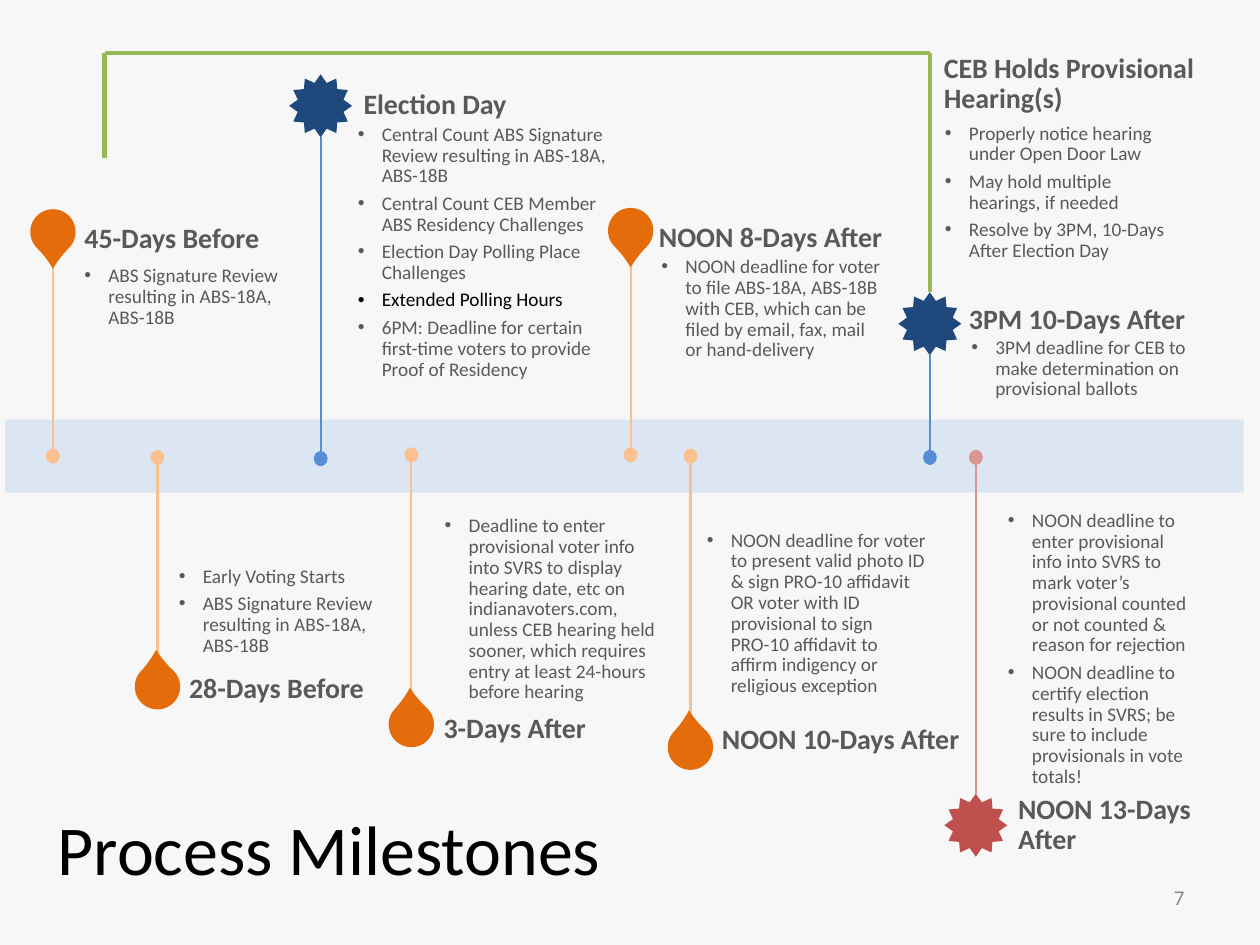
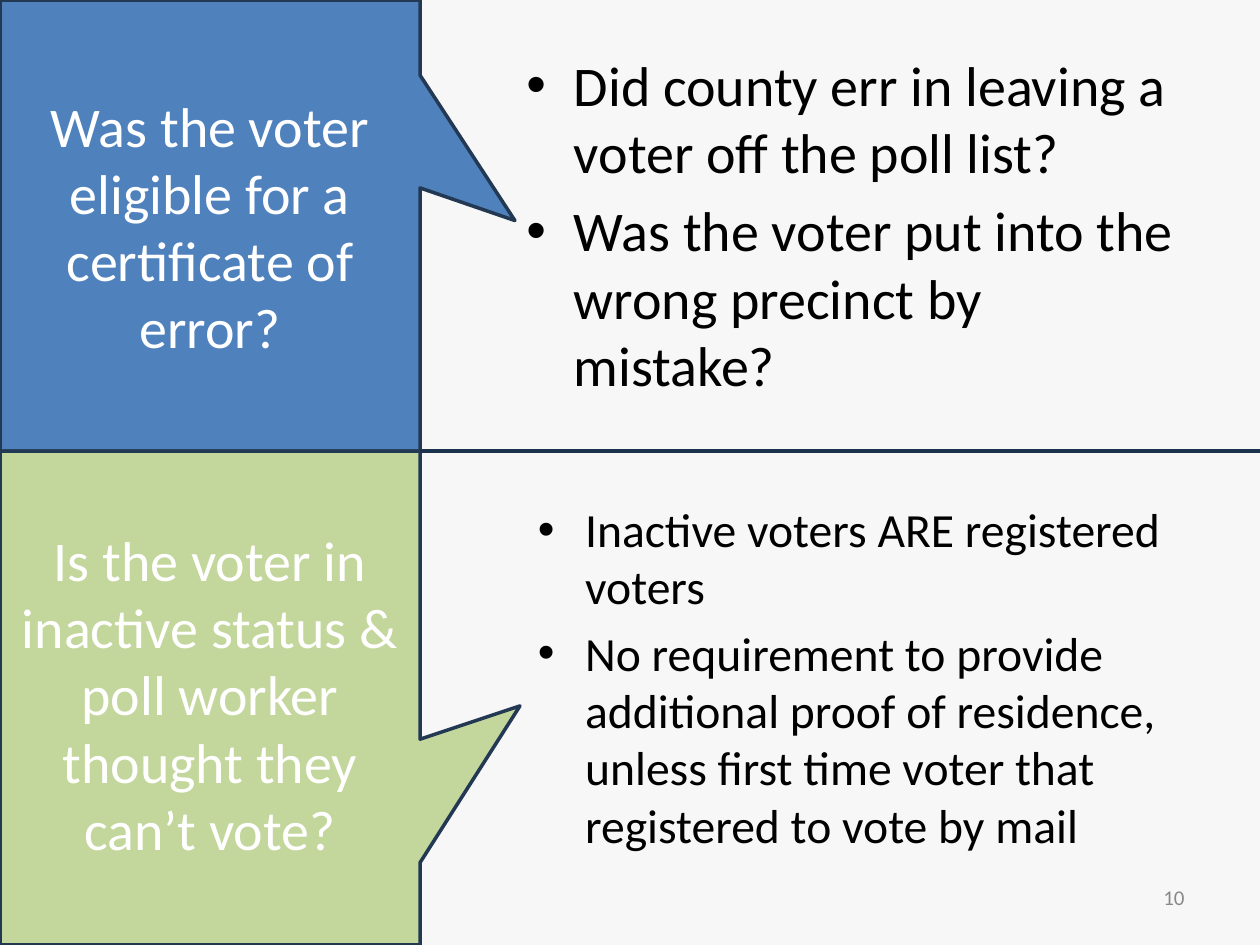
from dataclasses import dataclass
from lxml.etree import SubElement
from pptx import Presentation
from pptx.dml.color import RGBColor
from pptx.enum.shapes import MSO_CONNECTOR, MSO_SHAPE
from pptx.enum.text import MSO_ANCHOR, PP_ALIGN
from pptx.oxml.ns import qn
from pptx.util import Inches, Pt

# Grid: 100 columns by 75 rows of square cells
COLS, ROWS = 100, 75
CELL = Inches(10) / COLS

FONT = "Calibri"
PAPER = RGBColor(0xF7, 0xF7, 0xF7)
BLACK = RGBColor(0, 0, 0)
WHITE = RGBColor(255, 255, 255)
GREY = RGBColor(0x59, 0x59, 0x59)
PALE = RGBColor(0x89, 0x89, 0x89)
BAND = RGBColor(0xDC, 0xE6, 0xF2)
PEACH = RGBColor(0xFA, 0xC0, 0x90)
ORANGE = RGBColor(0xE4, 0x6C, 0x0A)
SKY = RGBColor(0x55, 0x8E, 0xD5)
NAVY = RGBColor(0x1F, 0x49, 0x7D)
ROSE = RGBColor(0xD9, 0x96, 0x94)
RED = RGBColor(0xC0, 0x50, 0x4D)
GREEN = RGBColor(0x98, 0xB9, 0x55)
BLUE = RGBColor(0x4F, 0x81, 0xBD)
LIME = RGBColor(0xC3, 0xD6, 0x9B)
EDGE = RGBColor(0x23, 0x39, 0x53)
RULE = RGBColor(0x1C, 0x33, 0x4E)

TOP, MID, LOW = MSO_ANCHOR.TOP, MSO_ANCHOR.MIDDLE, MSO_ANCHOR.BOTTOM
PLAIN = (1, 0.5, 1, 0.5)
HEAD_PAD = (0, 0, 1.1, 0)
NOTE_PAD = (0, 0.8, 0.8, 1.1)


@dataclass
class Box:
    x: float
    y: float
    w: float
    h: float

    def sub(self, x, y, w, h):
        return Box(self.x + x, self.y + y, w, h)

    def size(self):
        return [round(v * CELL) for v in (self.x, self.y, self.w, self.h)]


@dataclass
class Style:
    size: float
    color: RGBColor
    bold: bool = False
    align: PP_ALIGN = PP_ALIGN.LEFT
    indent: float = 0
    line: float = 1
    before: float = 0  # share of the font size
    after: float = 0


HEAD = Style(16, GREY, bold=True, line=0.9, after=0.35)
NOTE = Style(11, GREY, indent=1.9, line=0.9, after=0.35)
TITLE = Style(40, BLACK)
PAGE = Style(12, PALE, align=PP_ALIGN.RIGHT)
ASK = Style(32, WHITE, align=PP_ALIGN.CENTER)


def bullet(para, indent):
    props = para._p.get_or_add_pPr()
    step = round(indent * CELL)
    props.set("marL", str(step))
    props.set("indent", str(-step))
    SubElement(props, qn("a:buFont")).set("typeface", "Arial")
    SubElement(props, qn("a:buChar")).set("char", "•")


def write(shape, items, style, anchor=TOP, pad=PLAIN):
    """Each item is a text, or a text with its own colour."""
    frame = shape.text_frame
    frame.word_wrap = True
    frame.vertical_anchor = anchor
    (frame.margin_left, frame.margin_top,
     frame.margin_right, frame.margin_bottom) = [round(v * CELL) for v in pad]
    for i, item in enumerate(items):
        text, color = item if isinstance(item, tuple) else (item, style.color)
        para = frame.add_paragraph() if i else frame.paragraphs[0]
        para.alignment = style.align
        para.line_spacing = style.line
        para.space_before = Pt(style.before * style.size)
        para.space_after = Pt(style.after * style.size)
        if style.indent:
            bullet(para, style.indent)
        for j, part in enumerate(text.split("\n")):
            if j:
                para.add_line_break()
            run = para.add_run()
            run.text = part
            run.font.name = FONT
            run.font.size = Pt(style.size)
            run.font.bold = style.bold
            run.font.color.rgb = color


def label(slide, box, items, style, anchor=TOP, pad=PLAIN):
    write(slide.shapes.add_textbox(*box.size()), items, style, anchor, pad)


def form(slide, kind, box, fill, edge=None):
    shape = slide.shapes.add_shape(kind, *box.size())
    shape.shadow.inherit = False
    shape.fill.solid()
    shape.fill.fore_color.rgb = fill
    if edge:
        shape.line.color.rgb = edge
        shape.line.width = Pt(2)
    else:
        shape.line.fill.background()
    return shape


def rule(slide, box, color, width):
    """Straight line along the diagonal of the box."""
    x, y, w, h = box.size()
    line = slide.shapes.add_connector(MSO_CONNECTOR.STRAIGHT, x, y, x + w, y + h)
    line.line.color.rgb = color
    line.line.width = Pt(width)
    SubElement(line._element.spPr, qn("a:effectLst"))


def page(deck, number):
    slide = deck.slides.add_slide(deck.slide_layouts[6])
    slide.background.fill.solid()
    slide.background.fill.fore_color.rgb = PAPER
    label(slide, Box(90, 69.2, 5, 4), [number], PAGE, MID)
    return slide


@dataclass
class Stop:
    x: float      # stem
    dot: float    # row of the dot on the band
    mark: float   # row of the marker's centre
    head: str
    shift: tuple  # heading, from the marker's centre
    edge: tuple   # note's left and its fixed edge, from the marker's centre
    notes: list
    wide: float = 18.3
    star: bool = False
    tones: tuple = (PEACH, ORANGE)


STOPS = [
    Stop(4.2, 36.2, 18.4, "45-Days Before", (2.5, 0.6), (2.5, 1.9),
         ["ABS Signature Review resulting in ABS-18A, ABS-18B"]),
    Stop(12.5, 36.3, 54.5, "28-Days Before", (2.5, 0.2), (1.7, -1.3),
         ["Early Voting Starts",
          "ABS Signature Review resulting in ABS-18A, ABS-18B"]),
    Stop(25.45, 36.4, 8.4, "Election Day", (3.4, 0), (2.95, 0.7),
         ["Central Count ABS Signature Review resulting in ABS-18A, ABS-18B",
          "Central Count CEB Member ABS Residency Challenges",
          "Election Day Polling Place Challenges",
          ("Extended Polling Hours", BLACK),
          "6PM: Deadline for certain first-time voters to provide "
          "Proof of Residency"], 21.6, True, (SKY, NAVY)),
    Stop(32.65, 36.1, 57.5, "3-Days After", (2.55, 0.4), (2.65, -0.6),
         ["Deadline to enter provisional voter info into SVRS to display "
          "hearing date, etc on indianavoters.com, unless CEB hearing held "
          "sooner, which requires entry at least 24-hours before hearing"]),
    Stop(50.05, 36.1, 18.3, "NOON 8-Days After", (2.25, 0.6), (2.45, 1.3),
         ["NOON deadline for voter to file ABS-18A, ABS-18B with CEB, which "
          "can be filed by email, fax, mail or hand-delivery"]),
    Stop(54.8, 36.2, 59.3, "NOON 10-Days After", (2.5, -0.5), (1.3, -2.9),
         ["NOON deadline for voter to present valid photo ID & sign PRO-10 "
          "affidavit OR voter with ID provisional to sign PRO-10 affidavit "
          "to affirm indigency or religious exception"]),
    Stop(73.8, 36.3, 25.7, "3PM 10-Days After", (3.1, -0.3), (3.3, 0.3),
         ["3PM deadline for CEB to make determination on provisional ballots"],
         star=True, tones=(SKY, NAVY)),
    Stop(77.45, 36.3, 65.5, "NOON 13-Days\nAfter", (3.35, 0), (2.55, -1.9),
         ["NOON deadline to enter provisional info into SVRS to mark voter’s "
          "provisional counted or not counted & reason for rejection",
          "NOON deadline to certify election results in SVRS; be sure to "
          "include provisionals in vote totals!"], 15.6, True, (ROSE, RED)),
]


def heading(slide, box, text):
    label(slide, box, [text], HEAD, MID, HEAD_PAD)


def milestone(slide, area, stop):
    above = stop.mark < stop.dot
    light, dark = stop.tones
    # Stem and dot
    tip = stop.mark + (2.5 if above else -2.5)
    first, last = sorted((stop.dot, tip))
    rule(slide, area.sub(stop.x, first, 0, last - first), light, 1.25)
    form(slide, MSO_SHAPE.OVAL,
         area.sub(stop.x - 0.55, stop.dot - 0.6, 1.1, 1.2), light)
    # Marker
    side = 5 if stop.star else 3.6
    spot = area.sub(stop.x - side / 2, stop.mark - side / 2, side, side)
    if stop.star:
        form(slide, MSO_SHAPE.STAR_12_POINT, spot, dark)
    else:
        drop = form(slide, MSO_SHAPE.TEAR, spot, dark)
        drop.adjustments[0] = 1.15
        drop.rotation = 135 if above else 312.8
    # Heading and note
    dx, dy = stop.shift
    heading(slide, area.sub(stop.x + dx, stop.mark + dy - 2.3, 21.1, 4.6),
            stop.head)
    dx, dy = stop.edge
    tall = 13.1
    y = stop.mark + dy - (0 if above else tall)
    label(slide, area.sub(stop.x + dx, y, stop.wide, tall), stop.notes, NOTE,
          TOP if above else LOW, NOTE_PAD)


def hearing(slide, box):
    # Bracket over the period of hearings
    for x, y, w, h in ((0, 0, 65.5, 0), (0, 0, 0, 8.3), (65.5, 0, 0, 19)):
        rule(slide, box.sub(x, y, w, h), GREEN, 2.5)
    heading(slide, box.sub(66.6, 0.2, 21.1, 4.6),
            "CEB Holds Provisional Hearing(s)")
    label(slide, box.sub(66.7, 4.8, 18.3, 10.3),
          ["Properly notice hearing under Open Door Law",
           "May hold multiple hearings, if needed",
           "Resolve by 3PM, 10-Days After Election Day"],
          NOTE, TOP, NOTE_PAD)


def timeline(slide, area):
    form(slide, MSO_SHAPE.RECTANGLE, area.sub(0.4, 33.3, 98.3, 5.8), BAND)
    hearing(slide, area.sub(8.3, 4.2, 87.7, 19))
    for stop in STOPS:
        milestone(slide, area, stop)
    label(slide, area.sub(3.6, 63.4, 47, 9.5), ["Process Milestones"], TITLE)


def question(slide, box, ask, fill, tail, anchor, pad, answer, items, size):
    # Callout on the left third
    call = form(slide, MSO_SHAPE.RECTANGULAR_CALLOUT,
                box.sub(0, 0, box.w / 3, box.h), fill, EDGE)
    call.adjustments[0], call.adjustments[1] = tail
    write(call, [ask], ASK, anchor, pad)
    # Answers on the right
    dx, dy = answer
    label(slide, box.sub(dx, dy, 54.2, 29.2), items,
          Style(size, BLACK, indent=3.75, before=0.2))


def questions(slide, area):
    cut = 35.8
    question(slide, area.sub(0, 0, area.w, cut),
             "Was the voter eligible for a certificate of error?",
             BLUE, (0.726, -0.011), MID, PLAIN, (40.8, 3.5),
             ["Did county err in leaving a voter off the poll list?",
              "Was the voter put into the wrong precinct by mistake?"], 32)
    question(slide, area.sub(0, cut, area.w, area.h - cut),
             "Is the voter in inactive status & poll worker thought they "
             "can’t vote?",
             LIME, (0.738, 0.016), TOP, (1, 5.9, 1, 0.5), (41.7, 3.4),
             ["Inactive voters ARE registered voters",
              "No requirement to provide additional proof of residence, "
              "unless first time voter that registered to vote by mail"], 27.2)
    rule(slide, area.sub(area.w / 3, cut, area.w * 2 / 3, 0), RULE, 2.25)


def main():
    deck = Presentation()
    deck.slide_width = round(COLS * CELL)
    deck.slide_height = round(ROWS * CELL)
    area = Box(0, 0, COLS, ROWS)
    timeline(page(deck, "7"), area)
    questions(page(deck, "10"), area)
    deck.save("out.pptx")


if __name__ == "__main__":
    main()
